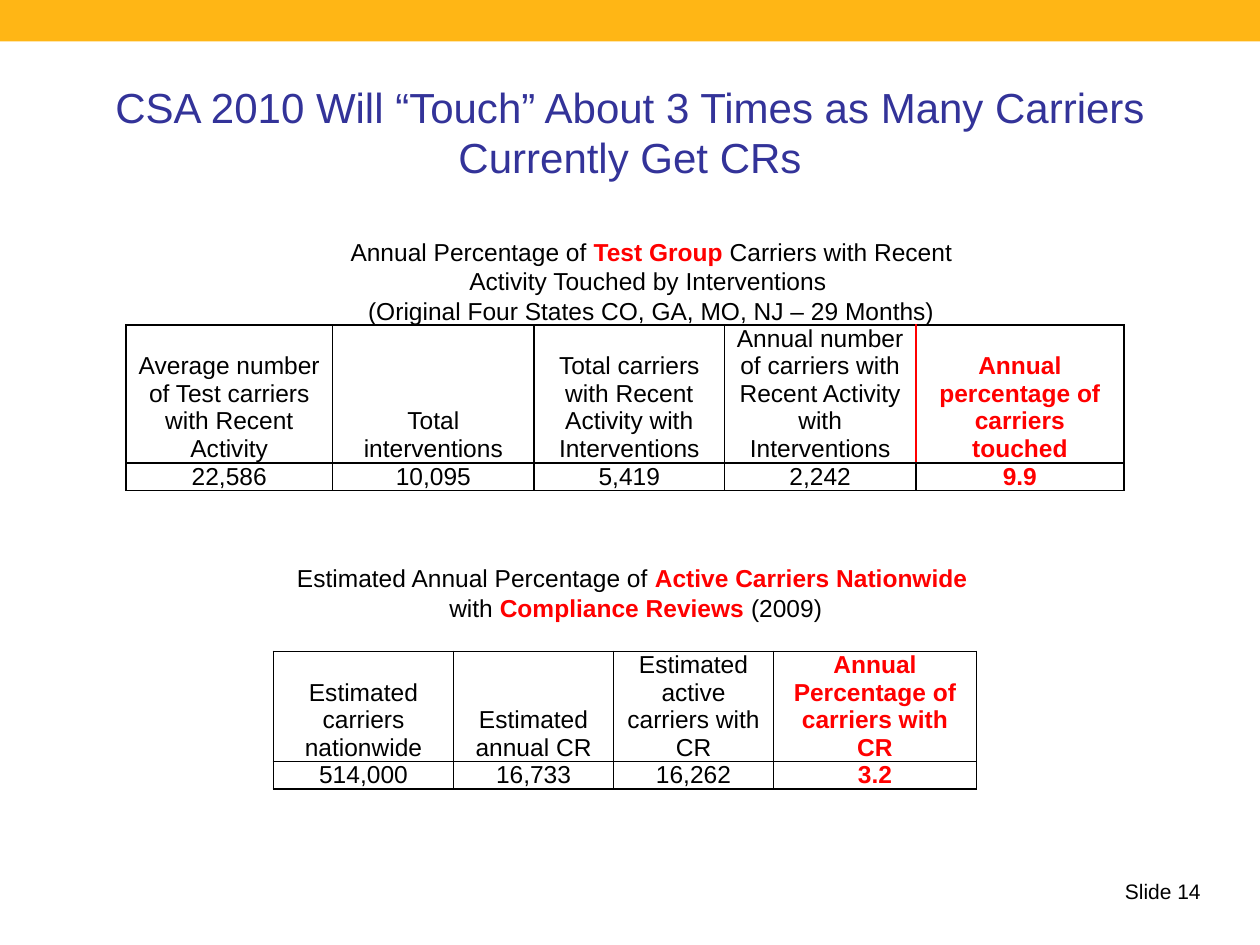
"""Build the slide comparing carriers touched by interventions with compliance reviews."""
from dataclasses import dataclass

from lxml.etree import SubElement
from pptx import Presentation
from pptx.dml.color import RGBColor
from pptx.enum.shapes import MSO_SHAPE as Shape
from pptx.enum.text import MSO_ANCHOR as Anchor, MSO_AUTO_SIZE as AutoSize, PP_ALIGN as Align
from pptx.oxml.ns import qn
from pptx.slide import Slide
from pptx.table import _Cell as Cell
from pptx.util import Inches, Pt

AMBER = RGBColor(0xFF, 0xB6, 0x15)
INDIGO = RGBColor(0x33, 0x33, 0x99)
BLACK = RGBColor(0x00, 0x00, 0x00)
RED = RGBColor(0xFF, 0x00, 0x00)
FONT = "Arial"


@dataclass(frozen=True)
class Run:
    text: str
    highlighted: bool = False


@dataclass(frozen=True)
class TextBox:
    box: tuple[float, float, float, float]
    paragraphs: list[list[Run]]
    size: int = 14
    align: Align = Align.CENTER


@dataclass(frozen=True)
class DataTable:
    left: float
    top: float
    widths: list[float]
    heights: list[float]
    rows: list[list[str]]
    red_divider: bool = False


TEXT_BOXES = [
    TextBox((2.67, 1.83, 5, 0.81), [[
        Run("Annual Percentage of "),
        Run("Test Group ", True),
        Run("Carriers with Recent Activity Touched by Interventions "),
        Run("\v"),
        Run("(Original Four States CO, GA, MO, NJ – 29 Months)"),
    ]]),
    TextBox((1.92, 4.42, 6.25, 0.57), [
        [Run("Estimated Annual Percentage of "), Run("Active Carriers Nationwide ", True)],
        [Run("with "), Run("Compliance Reviews ", True), Run("(2009)")],
    ]),
    TextBox((8.83, 6.92, 0.83, 0.3), [[Run("Slide 14")]], 12, Align.LEFT),
]

TABLES = [
    DataTable(1, 2.58, [1.64, 1.6, 1.51, 1.52, 1.65], [0.9, 0.19], [
        ["Average number of Test carriers with Recent Activity", "Total interventions",
         "Total carriers with Recent Activity with Interventions",
         "Annual number of carriers with Recent Activity with Interventions",
         "Annual percentage of carriers touched"],
        ["22,586", "10,095", "5,419", "2,242", "9.9"],
    ], red_divider=True),
    DataTable(2.17, 5.17, [1.43, 1.27, 1.27, 1.61], [0.77, 0.21], [
        ["Estimated carriers nationwide", "Estimated annual CR",
         "Estimated active carriers with CR", "Annual Percentage of carriers with CR"],
        ["514,000", "16,733", "16,262", "3.2"],
    ]),
]


def add_bar(slide: Slide) -> None:
    bar = slide.shapes.add_shape(Shape.RECTANGLE, 0, 0, Inches(10), Inches(0.33))
    bar.shadow.inherit = False
    bar.fill.solid()
    bar.fill.fore_color.rgb = AMBER
    bar.line.fill.background()


def set_title(slide: Slide, text: str) -> None:
    title = slide.shapes.title
    title.left, title.top = Inches(0.75), Inches(0.42)
    title.width, title.height = Inches(8.5), Inches(1.25)
    frame = title.text_frame
    frame.text = text
    frame.vertical_anchor = Anchor.MIDDLE
    paragraph = frame.paragraphs[0]
    paragraph.alignment = Align.CENTER
    paragraph.font.name, paragraph.font.size = FONT, Pt(24)
    paragraph.font.color.rgb = INDIGO


def add_text_box(slide: Slide, item: TextBox) -> None:
    frame = slide.shapes.add_textbox(*map(Inches, item.box)).text_frame
    frame.word_wrap = True
    frame.auto_size = AutoSize.SHAPE_TO_FIT_TEXT
    for index, runs in enumerate(item.paragraphs):
        paragraph = frame.add_paragraph() if index else frame.paragraphs[0]
        paragraph.alignment = item.align
        paragraph.font.name, paragraph.font.size = FONT, Pt(item.size)
        for part in runs:
            if part.text == "\v":
                paragraph.add_line_break()
                continue
            run = paragraph.add_run()
            run.text = part.text
            run.font.name, run.font.size = FONT, Pt(item.size)
            run.font.bold = part.highlighted
            run.font.color.rgb = RED if part.highlighted else BLACK


def set_borders(cell: Cell, left: RGBColor, right: RGBColor) -> None:
    properties = cell._tc.get_or_add_tcPr()
    for side, color in (("L", left), ("R", right), ("T", BLACK), ("B", BLACK)):
        line = SubElement(properties, qn(f"a:ln{side}"), w=str(Pt(1)))
        fill = SubElement(line, qn("a:solidFill"))
        SubElement(fill, qn("a:srgbClr"), val=str(color))


def fill_cell(cell: Cell, text: str, highlighted: bool) -> None:
    cell.fill.background()
    cell.vertical_anchor = Anchor.BOTTOM
    cell.margin_left = cell.margin_right = Inches(0.07)
    cell.margin_top = cell.margin_bottom = 0
    cell.text = text
    paragraph = cell.text_frame.paragraphs[0]
    paragraph.alignment = Align.CENTER
    paragraph.font.name, paragraph.font.size = FONT, Pt(14)
    paragraph.font.bold = highlighted
    paragraph.font.color.rgb = RED if highlighted else BLACK


def add_data_table(slide: Slide, item: DataTable) -> None:
    last = len(item.widths) - 1
    table = slide.shapes.add_table(
        len(item.rows), len(item.widths), Inches(item.left), Inches(item.top),
        Inches(sum(item.widths)), Inches(sum(item.heights))).table
    table.first_row = table.horz_banding = False
    for column, width in zip(table.columns, item.widths):
        column.width = Inches(width)
    for row, height in zip(table.rows, item.heights):
        row.height = Inches(height)
    for row_index, texts in enumerate(item.rows):
        divided = item.red_divider and row_index == 0
        for column_index, text in enumerate(texts):
            cell = table.cell(row_index, column_index)
            set_borders(cell,
                        left=RED if divided and column_index == last else BLACK,
                        right=RED if divided and column_index == last - 1 else BLACK)
            fill_cell(cell, text, column_index == last)


def main() -> None:
    presentation = Presentation()
    presentation.slide_width, presentation.slide_height = Inches(10), Inches(7.5)
    slide = presentation.slides.add_slide(presentation.slide_layouts[5])
    add_bar(slide)
    set_title(slide, "CSA 2010 Will “Touch” About 3 Times as Many Carriers Currently Get CRs")
    for data_table in TABLES:
        add_data_table(slide, data_table)
    for text_box in TEXT_BOXES:
        add_text_box(slide, text_box)
    presentation.save("out.pptx")


if __name__ == "__main__":
    main()
